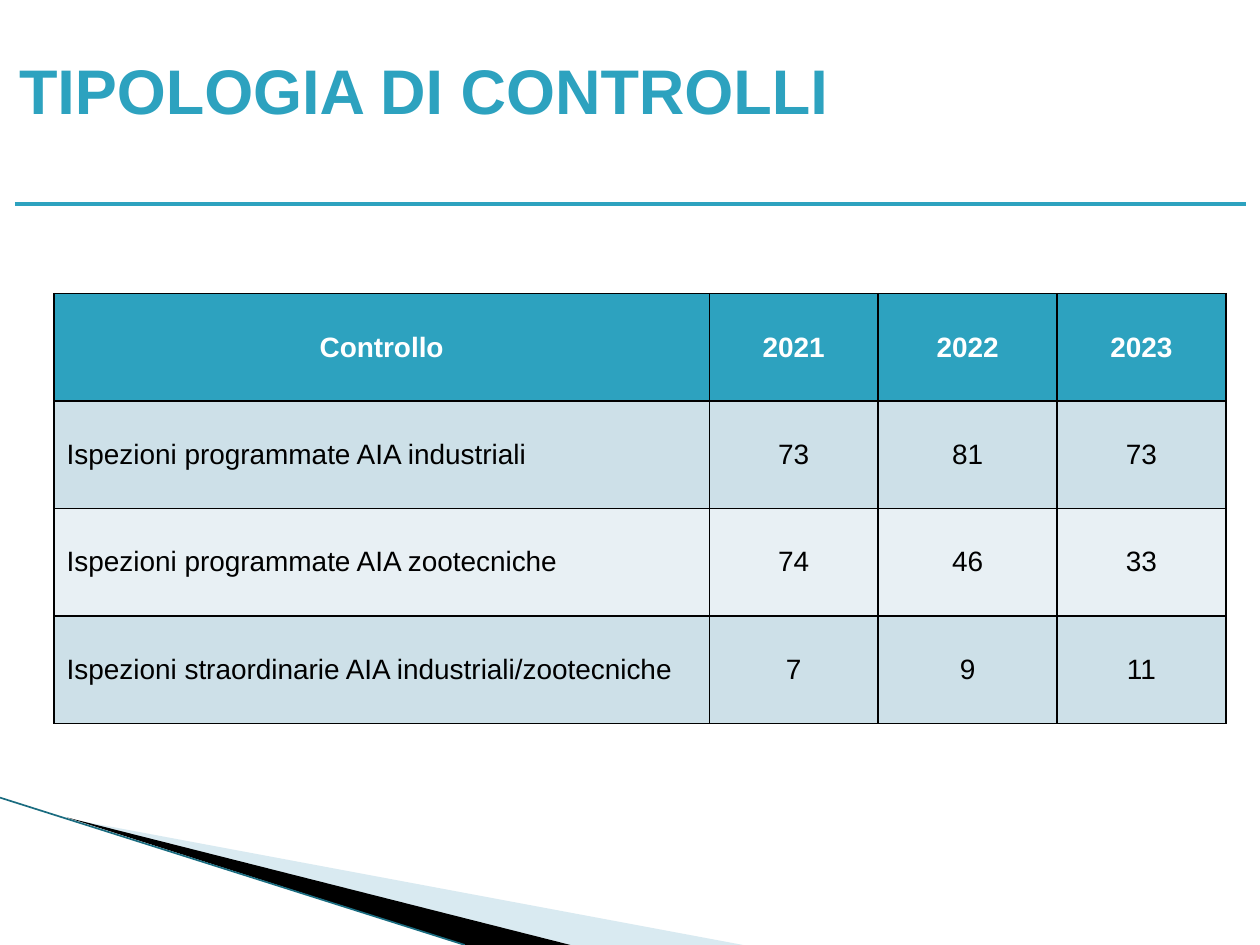
import lxml.etree
import pptx
import pptx.dml.color
import pptx.enum.shapes
import pptx.enum.text
import pptx.oxml.ns
import pptx.util

Cm = pptx.util.Cm
Pt = pptx.util.Pt
RGBColor = pptx.dml.color.RGBColor
qn = pptx.oxml.ns.qn
ALIGN = pptx.enum.text.PP_ALIGN
ANCHOR = pptx.enum.text.MSO_ANCHOR

TEAL = RGBColor(0x2D, 0xA2, 0xBF)
DARK_TEAL = RGBColor(0x1A, 0x6C, 0x80)
PALE_BLUE = RGBColor(0xA0, 0xCB, 0xDC)
ODD_ROW = RGBColor(0xCD, 0xE0, 0xE8)
EVEN_ROW = RGBColor(0xE8, 0xF0, 0xF4)
BLACK = RGBColor(0, 0, 0)
WHITE = RGBColor(0xFF, 0xFF, 0xFF)

FONT = "Arial"
COLUMN_WIDTHS = [13.21, 3.4, 3.61, 3.4]
CONTROLS = [
    ("Controllo", "2021", "2022", "2023"),
    ("Ispezioni programmate AIA industriali", "73", "81", "73"),
    ("Ispezioni programmate AIA zootecniche", "74", "46", "33"),
    ("Ispezioni straordinarie AIA industriali/zootecniche", "7", "9", "11"),
]


def write(text_frame, text, size, color, bold, alignment):
    text_frame.text = text
    paragraph = text_frame.paragraphs[0]
    paragraph.alignment = alignment
    font = paragraph.runs[0].font
    font.name, font.size, font.bold = FONT, Pt(size), bold
    font.color.rgb = color


def add_line(slide, start, end, color, width):
    line = slide.shapes.add_connector(
        pptx.enum.shapes.MSO_CONNECTOR.STRAIGHT,
        Cm(start[0]), Cm(start[1]), Cm(end[0]), Cm(end[1]))
    line.line.color.rgb = color
    line.line.width = Pt(width)
    lxml.etree.SubElement(line._element.spPr, qn("a:effectLst"))


def add_wedge(slide, points, color, opacity=100):
    corners = [(Cm(x), Cm(y)) for x, y in points]
    builder = slide.shapes.build_freeform(*corners[0])
    builder.add_line_segments(corners[1:], close=True)
    wedge = builder.convert_to_shape()
    wedge.shadow.inherit = False
    wedge.fill.solid()
    wedge.fill.fore_color.rgb = color
    wedge.line.fill.background()
    if opacity < 100:
        tint = wedge._element.spPr.find(qn("a:solidFill"))[0]
        lxml.etree.SubElement(tint, qn("a:alpha"), val=str(opacity * 1000))


def add_corner_decoration(slide, left, top, height):
    def place(*points):
        return [(left + x, top + y) for x, y in points]

    add_wedge(slide, place((1.4, 0.43), (14.98, height), (11.5, height)),
              PALE_BLUE, opacity=40)
    add_wedge(slide, place((1.35, 0.4), (11.5, height), (9.37, height)), BLACK)
    add_line(slide, *place((0, 0), (9.37, height)), DARK_TEAL, 0.95)


def add_title(slide, left, top, width, height):
    title = slide.shapes.add_textbox(Cm(left), Cm(top), Cm(width), Cm(height))
    title.text_frame.word_wrap = True
    write(title.text_frame, "TIPOLOGIA DI CONTROLLI", 36, TEAL, True, ALIGN.CENTER)
    add_line(slide, (left + 0.3, top + 3.2), (left + 25.12, top + 3.2), TEAL, 2)


def add_borders(cell):
    properties = cell._tc.get_or_add_tcPr()
    for side in ("a:lnL", "a:lnR", "a:lnT", "a:lnB"):
        border = lxml.etree.SubElement(properties, qn(side), w=str(Pt(1)))
        fill = lxml.etree.SubElement(border, qn("a:solidFill"))
        lxml.etree.SubElement(fill, qn("a:srgbClr"), val=str(BLACK))


def add_controls_table(slide, left, top, height):
    table = slide.shapes.add_table(
        len(CONTROLS), len(COLUMN_WIDTHS), Cm(left), Cm(top),
        Cm(sum(COLUMN_WIDTHS)), Cm(height)).table
    for column, width in zip(table.columns, COLUMN_WIDTHS):
        column.width = Cm(width)
    for r, values in enumerate(CONTROLS):
        header = r == 0
        background = TEAL if header else ODD_ROW if r % 2 else EVEN_ROW
        for c, value in enumerate(values):
            cell = table.cell(r, c)
            add_borders(cell)
            cell.fill.solid()
            cell.fill.fore_color.rgb = background
            cell.vertical_anchor = ANCHOR.MIDDLE
            write(cell.text_frame, value, 16, WHITE if header else BLACK, header,
                  ALIGN.CENTER if header or c else ALIGN.LEFT)


def main():
    presentation = pptx.Presentation()
    presentation.slide_width, presentation.slide_height = Cm(25.4), Cm(19.05)
    slide = presentation.slides.add_slide(presentation.slide_layouts[6])
    add_corner_decoration(slide, left=0, top=16.08, height=2.97)
    add_controls_table(slide, left=1.09, top=5.92, height=8.66)
    add_title(slide, left=0, top=0.91, width=17.09, height=3.02)
    presentation.save("out.pptx")


if __name__ == "__main__":
    main()
